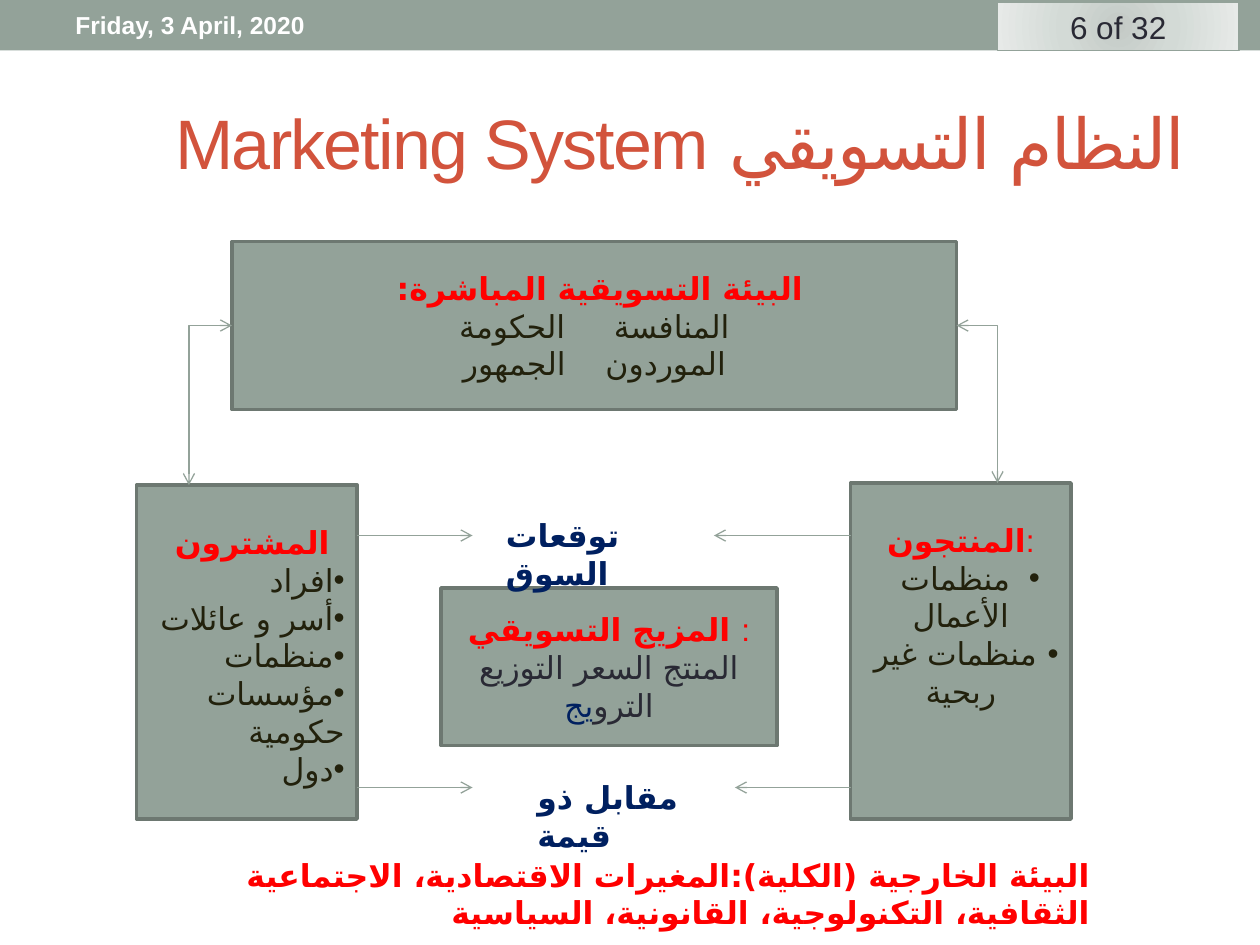
from collections import namedtuple

from lxml import etree
from pptx import Presentation
from pptx import util as u
from pptx.dml.color import RGBColor
from pptx.enum import shapes, text
from pptx.oxml import ns

COLUMNS, ROWS = 120, 90
CELL = u.Inches(10) // COLUMNS
SAGE, EDGE, RED, NAVY, OLIVE, INK = "93A299", "6D7871", "FF0000", "002060", "22210C", "292934"
LEFT, CENTER, RIGHT = text.PP_ALIGN.LEFT, text.PP_ALIGN.CENTER, text.PP_ALIGN.RIGHT
TOP, MIDDLE = text.MSO_ANCHOR.TOP, text.MSO_ANCHOR.MIDDLE

Box = namedtuple("Box", "left top width height")
Span = namedtuple("Span", "words color bold size spacing", defaults=(False, 18, 0))


def cells(*counts):
    return [u.Emu(round(count * CELL)) for count in counts]


def color(code):
    return RGBColor.from_string(code)


def child(parent, tag, **attributes):
    return etree.SubElement(parent, ns.qn(tag), **attributes)


def add_span(para, span):
    run = para.add_run()
    run.text = span.words
    run.font.name, run.font.size, run.font.bold = "Arial", u.Pt(span.size), span.bold
    run.font.color.rgb = color(span.color)
    properties = run._r.get_or_add_rPr()
    child(properties, "a:cs", typeface="DejaVu Sans")
    if span.spacing:
        properties.set("spc", str(span.spacing * 100))


def write(shape, lines, align=CENTER, anchor=MIDDLE, top=0.05):
    """Each line is (spans, options); options are align, rtl and bullet."""
    frame = shape.text_frame
    frame.word_wrap = True
    frame.vertical_anchor = anchor
    frame.margin_top = u.Inches(top)
    for index, (spans, options) in enumerate(lines):
        para = frame.add_paragraph() if index else frame.paragraphs[0]
        para.alignment = options.get("align", align)
        properties = para._p.get_or_add_pPr()
        if options.get("rtl"):
            properties.set("rtl", "1")
        if options.get("bullet"):
            child(properties, "a:buFont", typeface="Arial")
            child(properties, "a:buChar", char="•")
        for span in spans:
            add_span(para, span)


def add_panel(page, box, line=EDGE, width=2.08):
    panel = page.shapes.add_shape(shapes.MSO_SHAPE.RECTANGLE, *cells(*box))
    panel.shadow.inherit = False
    panel.fill.solid()
    panel.fill.fore_color.rgb = color(SAGE)
    if line:
        panel.line.color.rgb = color(line)
        panel.line.width = u.Pt(width)
    else:
        panel.line.fill.background()
    return panel


def add_label(page, box, span, align=LEFT, anchor=TOP, rtl=False):
    label = page.shapes.add_textbox(*cells(*box))
    write(label, [([span], {"rtl": rtl})], align, anchor)


def add_arrow(page, start, end, bent=False):
    kind = shapes.MSO_CONNECTOR.ELBOW if bent else shapes.MSO_CONNECTOR.STRAIGHT
    arrow = page.shapes.add_connector(kind, *cells(*start, *end))
    arrow.line.color.rgb = color(SAGE)
    arrow.line.width = u.Pt(0.75)
    properties = arrow._element.spPr
    line = arrow.line._get_or_add_ln()
    if bent:
        properties.find(ns.qn("a:prstGeom")).set("prst", "bentConnector2")
        child(line, "a:headEnd", type="arrow")
    child(line, "a:tailEnd", type="arrow")
    child(properties, "a:effectLst")


def fill_radially(shape, stops):
    shape.fill.gradient()
    gradient = shape._element.spPr.find(ns.qn("a:gradFill"))
    for part in list(gradient):
        gradient.remove(part)
    stop_list = child(gradient, "a:gsLst")
    for percent, code in stops:
        stop = child(stop_list, "a:gs", pos=str(percent * 1000))
        child(stop, "a:srgbClr", val=code)
    circle = child(gradient, "a:path", path="circle")
    child(circle, "a:fillToRect", l="50000", t="50000", r="50000", b="50000")


def add_header(page, box):
    add_panel(page, box, line=None)
    counter = add_panel(page, Box(box.left + 95, box.top + 0.24, 23, box.height - 0.24), SAGE, 0.75)
    fill_radially(counter, [(0, "C4CAC6"), (45, "D3DAD6"), (100, "E7EAE8")])
    write(counter, [([Span("6 of 32", INK)], {})])
    add_label(page, Box(box.left + 6, box.top + 0.24, 38, 4.3),
              Span("Friday, 3 April, 2020", "FFFFFF", True, 14), anchor=MIDDLE)


def add_environment(page, box):
    def pair(first, second, gap):
        return [Span(first, OLIVE), Span(" ", OLIVE, spacing=gap), Span(second, OLIVE)], {"rtl": True}

    write(add_panel(page, box), [
        ([Span("البيئة التسويقية المباشرة: ", RED, True)], {"rtl": True}),
        pair("المنافسة", "الحكومة", 22),
        pair("الموردون", "الجمهور", 17),
    ])


def add_group(page, box, heading, heading_rtl, items, align):
    lines = [(heading, {"rtl": heading_rtl})]
    lines += [([Span(item, OLIVE)], {"rtl": True, "bullet": True, "align": align}) for item in items]
    write(add_panel(page, box), lines, anchor=TOP, top=0.3)


def add_mix(page, box):
    write(add_panel(page, box), [
        ([Span("المزيج التسويقي ", RED, True), Span(":", RED)], {}),
        ([Span("المنتج السعر التوزيع الترو", INK), Span("يج", NAVY)], {}),
    ])


def add_system(page, box):
    """Environment on top, buyers and producers at the sides, the mix between them."""
    left, top, width, height = box
    environment = Box(left + 9.1, top, 69, 16)
    buyers = Box(left, top + 23.2, 21, height - 23.2)
    producers = Box(left + width - 21, top + 23, 21, height - 23)
    add_environment(page, environment)
    add_group(page, producers, [Span("المنتجون", RED, True), Span(":", RED)], False,
              ["منظمات الأعمال", "منظمات غير ربحية"], CENTER)
    add_mix(page, Box(left + 29, top + 33, 32, 15))
    add_group(page, buyers, [Span("المشترون ", RED, True)], True,
              ["افراد", "أسر و عائلات", "منظمات", "مؤسسات حكومية", "دول "], RIGHT)

    buyers_edge = buyers.left + buyers.width
    elbow = top + 8
    add_arrow(page, (environment.left, elbow), (left + 5, buyers.top), bent=True)
    add_arrow(page, (environment.left + environment.width, elbow),
              (left + 82, producers.top), bent=True)
    for row, tip in ((top + 28, left + 55), (top + 52, left + 57)):
        add_arrow(page, (buyers_edge, row), (buyers_edge + 11, row))
        add_arrow(page, (producers.left, row), (tip, row))
    add_label(page, Box(left + 34, top + 25.6, 21, 4.8), Span("توقعات السوق", NAVY, True))
    add_label(page, Box(left + 37, top + 50.5, 17.4, 4.8), Span("مقابل ذو قيمة", NAVY, True))


def main():
    deck = Presentation()
    deck.slide_width, deck.slide_height = cells(COLUMNS, ROWS)
    page = deck.slides.add_slide(deck.slide_layouts[6])
    add_header(page, Box(0, 0, COLUMNS, 4.8))
    add_label(page, Box(6, 7, 108, 13),
              Span("النظام التسويقي Marketing System ", "D2533C", False, 40, -1),
              RIGHT, MIDDLE, rtl=True)
    add_system(page, Box(13, 23, 89, 55))
    add_label(page, Box(15, 80.9, 90, 8.5),
              Span("البيئة الخارجية (الكلية):المغيرات الاقتصادية، الاجتماعية "
                   "الثقافية، التكنولوجية، القانونية، السياسية", RED, True), RIGHT)
    deck.save("out.pptx")


if __name__ == "__main__":
    main()
